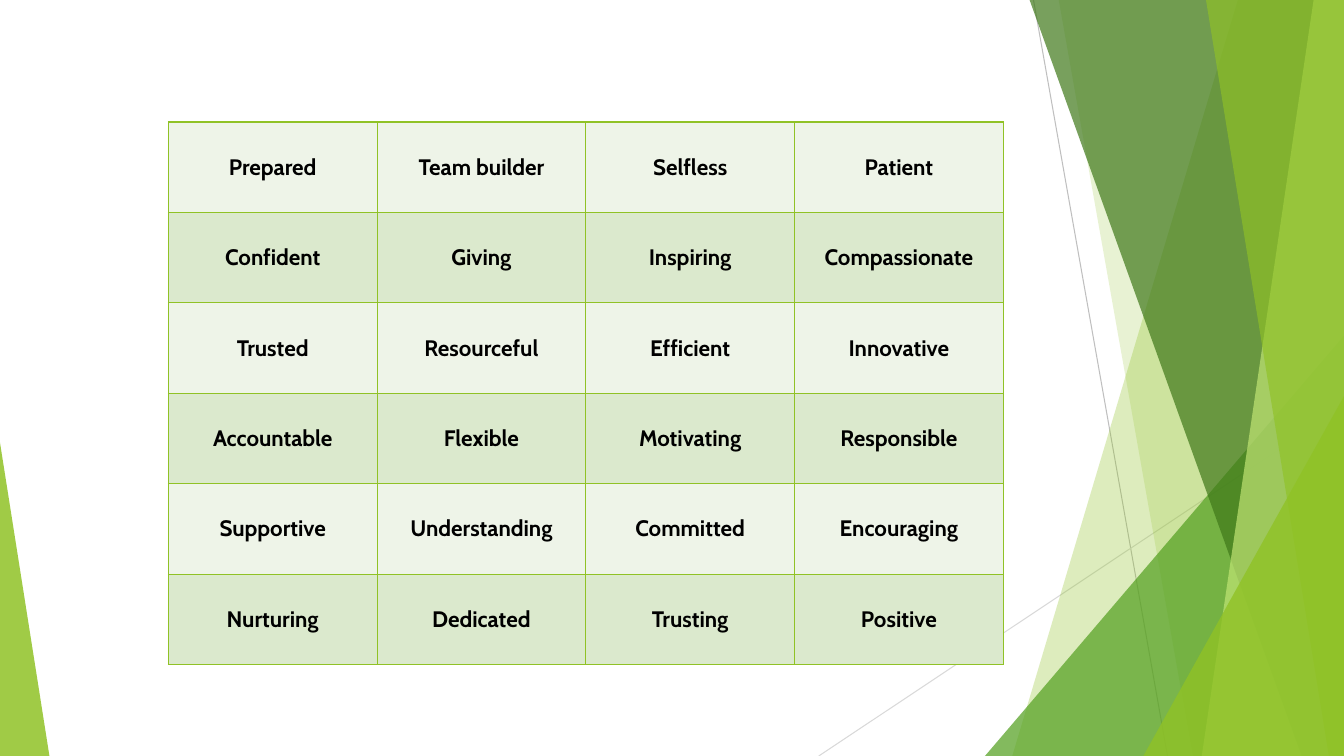
"""Build a slide with a table of personal qualities beside green facets."""
from lxml import etree
from pptx import Presentation
from pptx import util as u
from pptx.dml.color import RGBColor
from pptx.enum import shapes, text
from pptx.oxml import ns

WIDE, HIGH = u.Inches(13.33), u.Inches(7.5)
LIME = RGBColor(0x90, 0xC2, 0x26)
PALE = RGBColor(0xC0, 0xE4, 0x74)
LEAF = RGBColor(0x54, 0xA0, 0x21)
MOSS = RGBColor(0x3F, 0x78, 0x19)
GREY = RGBColor(0xBF, 0xBF, 0xBF)
MIST = RGBColor(0xD9, 0xD9, 0xD9)
LIGHT = RGBColor(0xEE, 0xF4, 0xE8)
BAND = RGBColor(0xDB, 0xE9, 0xCD)
BLACK = RGBColor(0, 0, 0)

WORDS = [
    ["Prepared", "Team builder", "Selfless", "Patient"],
    ["Confident", "Giving", "Inspiring", "Compassionate"],
    ["Trusted", "Resourceful", "Efficient", "Innovative"],
    ["Accountable", "Flexible", "Motivating", "Responsible"],
    ["Supportive", "Understanding", "Committed", "Encouraging"],
    ["Nurturing", "Dedicated", "Trusting", "Positive"],
]


def across(share):
    return round(WIDE * share / 100)


def down(share):
    return round(HIGH * share / 100)


def add(node, tag, **attrs):
    return etree.SubElement(node, ns.qn(tag), attrs)


def tint(shape, color, alpha):
    shape.shadow.inherit = False
    shape.line.fill.background()
    shape.fill.solid()
    shape.fill.fore_color.rgb = color
    for node in shape.fill._xPr.iter(ns.qn("a:srgbClr")):
        add(node, "a:alpha", val=str(alpha * 1000))


def thread(slide, start, end, color):
    line = slide.shapes.add_connector(
        shapes.MSO_CONNECTOR.STRAIGHT,
        across(start[0]), down(start[1]), across(end[0]), down(end[1]))
    line.line.color.rgb = color
    line.line.width = u.Pt(0.75)
    add(line._element.spPr, "a:effectLst")


def panel(slide, top, base, color, alpha):
    edge = [(100, -0.1), (100, 100), (base, 100), (top, -0.1)]
    form = slide.shapes.build_freeform(across(top), down(-0.1))
    form.add_line_segments([(across(x), down(y)) for x, y in edge])
    tint(form.convert_to_shape(), color, alpha)


def wedge(slide, left, right, top, peak, color, alpha):
    shape = slide.shapes.add_shape(
        shapes.MSO_SHAPE.ISOSCELES_TRIANGLE, across(left), down(top),
        across(right - left), down(100 - top))
    shape.adjustments[0] = peak
    tint(shape, color, alpha)


def write(frame, words, font="Cabin", size=16, color=BLACK, bold=True):
    para = frame.paragraphs[0]
    para.alignment = text.PP_ALIGN.CENTER
    run = para.add_run()
    run.text = words
    run.font.name = font
    run.font.size = u.Pt(size)
    run.font.color.rgb = color
    run.font.bold = bold


def border(cell, color):
    props = cell._tc.get_or_add_tcPr()
    for spot, side in enumerate(("a:lnL", "a:lnR", "a:lnT", "a:lnB")):
        line = etree.Element(ns.qn(side), w=str(u.Pt(1)))
        add(add(line, "a:solidFill"), "a:srgbClr", val=str(color))
        props.insert(spot, line)


def grid(slide, rows, left, top, width, height):
    table = slide.shapes.add_table(
        len(rows), len(rows[0]), across(left), down(top),
        across(width), down(height)).table
    table.first_row = table.horz_banding = False
    for r, row in enumerate(rows):
        for c, words in enumerate(row):
            cell = table.cell(r, c)
            cell.margin_left = cell.margin_right = u.Inches(0.07)
            cell.margin_top = cell.margin_bottom = 0
            cell.vertical_anchor = text.MSO_ANCHOR.MIDDLE
            cell.fill.solid()
            cell.fill.fore_color.rgb = BAND if r % 2 else LIGHT
            border(cell, LIME)
            write(cell.text_frame, words)


def main():
    deck = Presentation()
    deck.slide_width, deck.slide_height = WIDE, HIGH
    slide = deck.slides.add_slide(deck.slide_layouts[6])
    thread(slide, (76.9, 0), (86.87, 100), GREY)
    thread(slide, (100, 53.73), (60.92, 100), MIST)
    panel(slide, 92.12, 75.32, LIME, 30)
    panel(slide, 78.77, 88.75, LIME, 20)
    wedge(slide, 73.29, 100, 44.4, 1, LEAF, 72)
    panel(slide, 76.59, 96.85, MOSS, 70)
    panel(slide, 97.75, 89.42, PALE, 70)
    panel(slide, 89.72, 98.87, LIME, 65)
    wedge(slide, 85.07, 100, 52.4, 1, LIME, 80)
    wedge(slide, 0, 3.68, 58.53, 0, LIME, 85)
    grid(slide, WORDS, 12.53, 16.13, 62.12, 71.8)
    deck.save("out.pptx")


if __name__ == "__main__":
    main()
